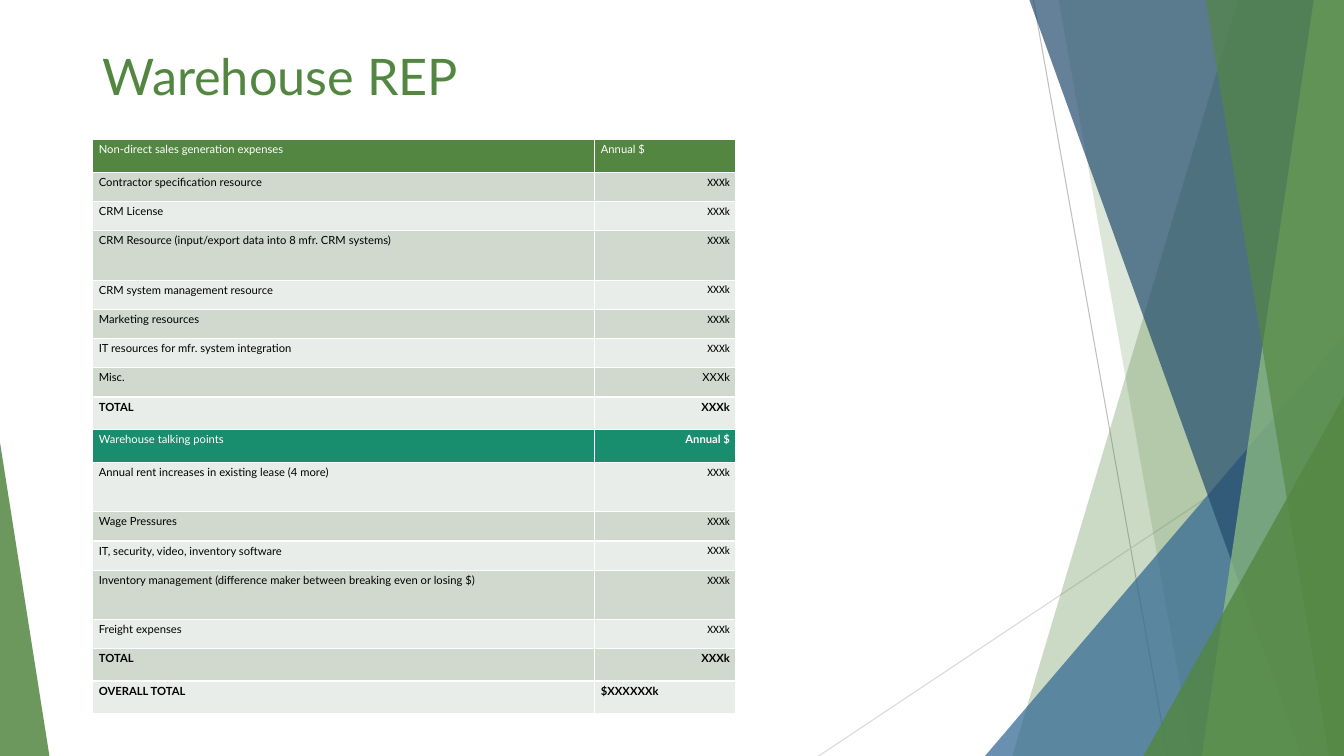
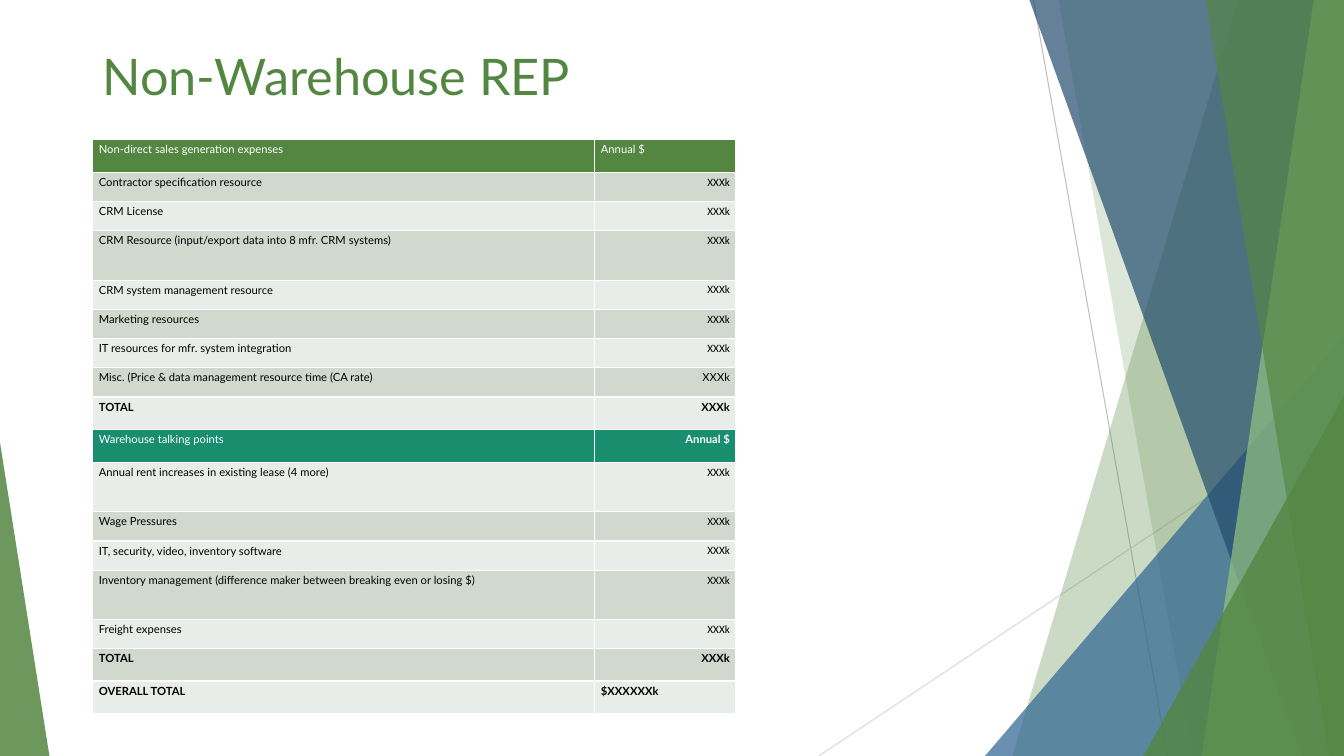
from dataclasses import dataclass

from lxml import etree
from pptx import Presentation
from pptx import util as u
from pptx.dml.color import RGBColor
from pptx.enum import shapes, text
from pptx.oxml.ns import qn


@dataclass(frozen=True)
class Theme:
    green: str = "538741"
    light_green: str = "92C381"
    blue: str = "306692"
    navy: str = "244C6E"
    teal: str = "198E6F"
    dark_row: str = "D1D9CF"
    light_row: str = "E9EDE9"
    dark_line: str = "BFBFBF"
    light_line: str = "D9D9D9"
    white: str = "FFFFFF"
    black: str = "000000"
    font: str = "Lato"
    value_font: str = "Calibri"
    title_size: int = 36
    table_size: int = 8


theme = Theme()
PX = 9144  # 100 px to the inch
WIDTH, HEIGHT = 1333, 750

RULES = [
    ((1025, 0), (1158, HEIGHT), theme.dark_line),
    ((WIDTH, 403), (812, HEIGHT), theme.light_line),
]

# Back to front. A band gives the top and bottom x of its slanted left edge;
# a triangle gives left, top, width, height and the position of its apex.
FACETS = [
    ("band", (1228, 1004), theme.green, 30),
    ("band", (1050, 1183), theme.green, 20),
    ("triangle", (977, 333, 356, 417, 1), theme.blue, 72),
    ("band", (1021, 1291), theme.navy, 70),
    ("band", (1303, 1192), theme.light_green, 70),
    ("band", (1196, 1318), theme.green, 65),
    ("triangle", (1134, 393, 199, 357, 1), theme.green, 80),
    ("triangle", (0, 439, 49, 311, 0), theme.green, 85),
]

COLUMN_WIDTHS = [498, 140]
ROW_HEIGHTS = {"header": 33, "section": 33, "item": 29, "tall": 49,
               "misc": 29, "total": 32, "overall": 32}
SLIDES = [
    ("Warehouse REP", "Misc."),
    ("Non-Warehouse REP", "Misc. (Price & data management resource time (CA rate)"),
]


def style_run(span, size, color, font=theme.font, bold=False):
    span.font.name = font
    span.font.size = u.Pt(size)
    span.font.bold = bold
    span.font.color.rgb = RGBColor.from_string(color)


def fill_translucent(shape, color, opacity):
    shape.shadow.inherit = False
    shape.line.fill.background()
    shape.fill.solid()
    shape.fill.fore_color.rgb = RGBColor.from_string(color)
    color_element = shape.fill._xPr.find(qn("a:solidFill"))[0]
    etree.SubElement(color_element, qn("a:alpha"), val=str(opacity * 1000))


deck = Presentation()
deck.slide_width = WIDTH * PX
deck.slide_height = HEIGHT * PX

for title, misc_label in SLIDES:
    page = deck.slides.add_slide(deck.slide_layouts[6])

    for start, end, color in RULES:
        rule = page.shapes.add_connector(
            shapes.MSO_CONNECTOR.STRAIGHT, *(n * PX for n in start + end))
        rule.line.width = u.Pt(0.75)
        rule.line.color.rgb = RGBColor.from_string(color)
        etree.SubElement(rule._element.spPr, qn("a:effectLst"))

    for kind, geometry, color, opacity in FACETS:
        if kind == "band":
            top_x, bottom_x = geometry
            outline = page.shapes.build_freeform(top_x, 0, scale=PX)
            outline.add_line_segments(
                [(WIDTH, 0), (WIDTH, HEIGHT), (bottom_x, HEIGHT)], close=True)
            facet = outline.convert_to_shape()
        else:
            *place, apex = geometry
            facet = page.shapes.add_shape(
                shapes.MSO_SHAPE.ISOSCELES_TRIANGLE, *(n * PX for n in place))
            facet.adjustments[0] = apex
        fill_translucent(facet, color, opacity)

    box = page.shapes.add_textbox(92 * PX, 40 * PX, 1150 * PX, 98 * PX)
    box.text_frame.word_wrap = True
    box.text_frame.text = title
    style_run(box.text_frame.paragraphs[0].runs[0], theme.title_size, theme.green)

    rows = [
        ("header", "Non-direct sales generation expenses", "Annual $"),
        ("item", "Contractor specification resource", "XXXk"),
        ("item", "CRM License", "XXXk"),
        ("tall", "CRM Resource (input/export data into 8 mfr. CRM systems)", "XXXk"),
        ("item", "CRM system management resource", "XXXk"),
        ("item", "Marketing resources", "XXXk"),
        ("item", "IT resources for mfr. system integration", "XXXk"),
        ("misc", misc_label, "XXXk"),
        ("total", "TOTAL", "XXXk"),
        ("section", "Warehouse talking points", "Annual $"),
        ("tall", "Annual rent increases in existing lease (4 more)", "XXXk"),
        ("item", "Wage Pressures", "XXXk"),
        ("item", "IT, security, video, inventory software", "XXXk"),
        ("tall", "Inventory management (difference maker between breaking even or losing $)",
         "XXXk"),
        ("item", "Freight expenses", "XXXk"),
        ("total", "TOTAL", "XXXk"),
        ("overall", "OVERALL TOTAL", "$XXXXXXk"),
    ]
    heights = [ROW_HEIGHTS[kind] for kind, *_ in rows]
    table = page.shapes.add_table(
        len(rows), len(COLUMN_WIDTHS), 92 * PX, 138 * PX,
        sum(COLUMN_WIDTHS) * PX, sum(heights) * PX).table
    for column, width in zip(table.columns, COLUMN_WIDTHS):
        column.width = width * PX

    for row_index, (kind, *labels) in enumerate(rows):
        table.rows[row_index].height = heights[row_index] * PX
        banding = theme.dark_row if row_index % 2 else theme.light_row
        fill = {"header": theme.green, "section": theme.teal}.get(kind, banding)
        color = theme.white if kind in ("header", "section") else theme.black
        for column_index, label in enumerate(labels):
            is_value = column_index == 1
            cell = table.cell(row_index, column_index)
            cell.fill.solid()
            cell.fill.fore_color.rgb = RGBColor.from_string(fill)
            cell.margin_left = cell.margin_right = 6 * PX
            cell.margin_top = cell.margin_bottom = 3 * PX
            cell.text_frame.text = label
            para = cell.text_frame.paragraphs[0]
            if is_value and kind not in ("header", "overall"):
                para.alignment = text.PP_ALIGN.RIGHT
            font = theme.value_font if is_value and kind in ("item", "tall") else theme.font
            bold = kind in ("total", "overall") or (is_value and kind == "section")
            style_run(para.runs[0], theme.table_size, color, font, bold)

deck.save("out.pptx")
